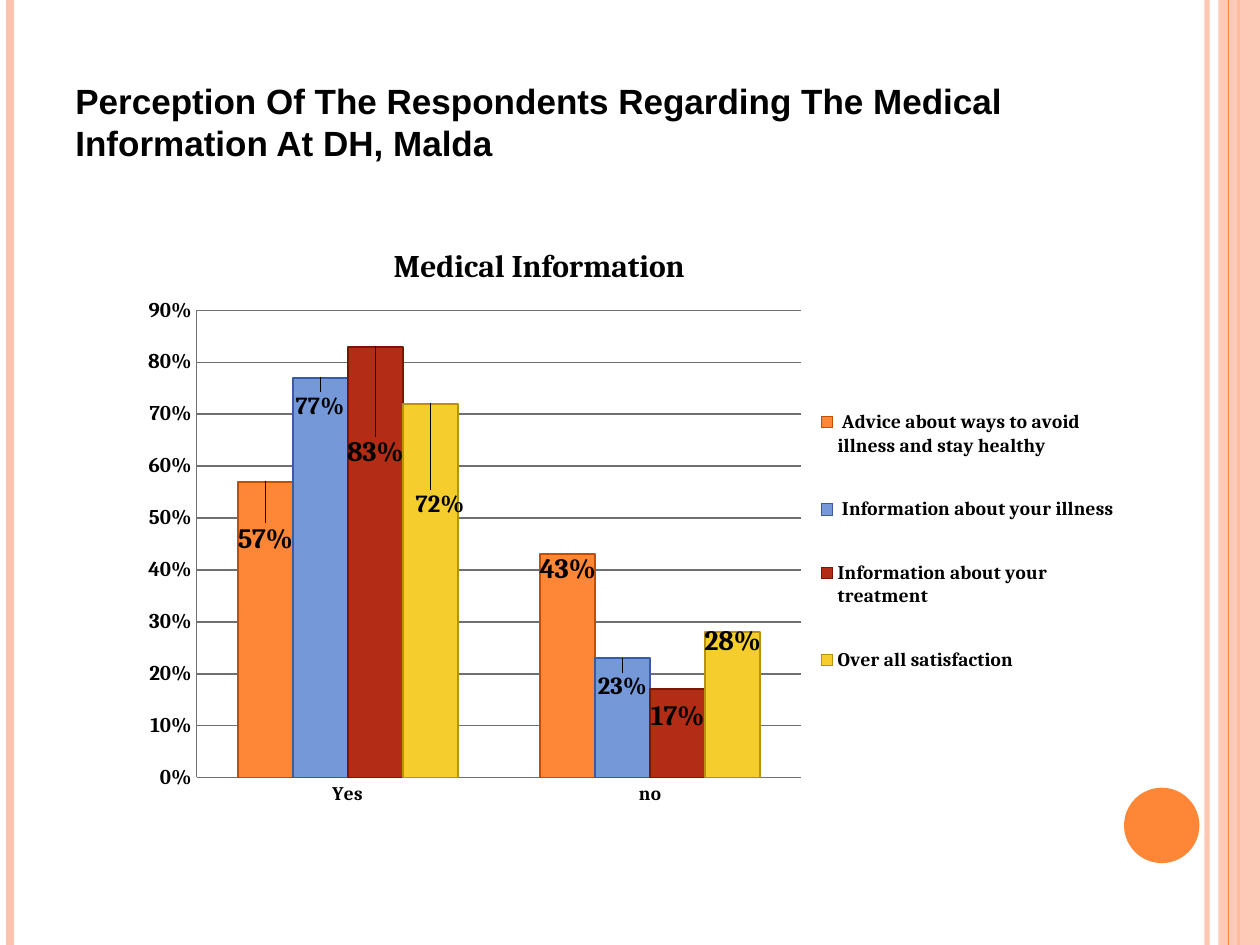
"""Build a slide with a clustered column chart on perceived medical information."""
from dataclasses import dataclass

from pptx import Presentation
from pptx.chart.data import CategoryChartData
from pptx.dml.color import RGBColor
from pptx.enum.chart import XL_CHART_TYPE, XL_LABEL_POSITION, XL_LEGEND_POSITION, XL_TICK_MARK
from pptx.enum.shapes import MSO_CONNECTOR, MSO_SHAPE
from pptx.oxml import parse_xml
from pptx.oxml.ns import nsdecls
from pptx.util import Cm, Pt

COLUMNS = XL_CHART_TYPE.COLUMN_CLUSTERED
OUTSIDE = XL_LABEL_POSITION.OUTSIDE_END
RIGHT = XL_LEGEND_POSITION.RIGHT
NO_TICK = XL_TICK_MARK.NONE
STRAIGHT = MSO_CONNECTOR.STRAIGHT
RECTANGLE = MSO_SHAPE.RECTANGLE
OVAL = MSO_SHAPE.OVAL

WIDTH, HEIGHT = 25.4, 19.05
PINK, ORANGE, BLACK, GREY = "FEC3AE", "FE8637", "000000", "707070"


@dataclass(frozen=True)
class Stripe:
    x: float
    color: str
    weight: float
    opacity: int = 100


@dataclass(frozen=True)
class Block:
    preset: MSO_SHAPE
    box: tuple[float, float, float, float]
    color: str
    opacity: int = 100


@dataclass(frozen=True)
class Answer:
    name: str
    shares: tuple[float, float]
    color: str
    outline: str
    label_sizes: tuple[int, int]
    label_shifts: tuple[tuple[float, float], tuple[float, float]]


DECORATION = (
    Stripe(24.33, PINK, 3, 93),
    Stripe(0.2, PINK, 4.5),
    Stripe(24.97, ORANGE, 1.5),
    Block(RECTANGLE, (24.56, 0, 0.84, HEIGHT), PINK, 87),
    Stripe(24.77, ORANGE, 0.75),
    Block(OVAL, (22.66, 15.88, 1.52, 1.52), ORANGE),
)
CATEGORIES = ("Yes", "no")
ANSWERS = (
    Answer(" Advice about ways to avoid illness and stay healthy", (0.57, 0.43),
           ORANGE, "C24F00", (16, 16), ((0, 0.13), (0, 0.06))),
    Answer(" Information about your illness", (0.77, 0.23),
           "7598D9", "3A5BA0", (14, 14), ((0, 0.08), (0, 0.08))),
    Answer("Information about your treatment", (0.83, 0.17),
           "B32C16", "7D1404", (16, 16), ((0, 0.21), (0, 0.08))),
    Answer("Over all satisfaction", (0.72, 0.28),
           "F5CD2D", "B8920A", (14, 16), ((0.01, 0.2), (0, 0.05))),
)


def rgb(value: str) -> RGBColor:
    return RGBColor.from_string(value)


def apply(target, formats: dict) -> None:
    for attribute, value in formats.items():
        setattr(target, attribute, value)


def style_font(font, size: float, name: str = "Cambria") -> None:
    apply(font, {"size": Pt(size), "bold": True, "name": name})
    font.color.rgb = rgb(BLACK)


def style_line(line, color: str, weight: float) -> None:
    line.color.rgb = rgb(color)
    line.width = Pt(weight)


def set_opacity(shape, percent: int) -> None:
    if percent < 100:
        color = shape._element.spPr.xpath(".//a:srgbClr")[0]
        color.append(parse_xml(f'<a:alpha {nsdecls("a")} val="{percent * 1000}"/>'))


def draw_stripe(slide, stripe: Stripe) -> None:
    x = Cm(stripe.x)
    line = slide.shapes.add_connector(STRAIGHT, x, 0, x, Cm(HEIGHT))
    style_line(line.line, stripe.color, stripe.weight)
    set_opacity(line, stripe.opacity)
    line._element.spPr.append(parse_xml(f'<a:effectLst {nsdecls("a")}/>'))


def draw_block(slide, block: Block) -> None:
    shape = slide.shapes.add_shape(block.preset, *map(Cm, block.box))
    shape.shadow.inherit = False
    shape.fill.solid()
    shape.fill.fore_color.rgb = rgb(block.color)
    shape.line.fill.background()
    set_opacity(shape, block.opacity)


def layout_xml(target: str = "", **fractions: float):
    parts = [f'<c:layoutTarget val="{target}"/>'] if target else []
    if "w" in fractions:
        parts += ['<c:xMode val="edge"/>', '<c:yMode val="edge"/>']
    parts += [f'<c:{key} val="{value}"/>' for key, value in fractions.items()]
    return parse_xml(f'<c:layout {nsdecls("c")}><c:manualLayout>{"".join(parts)}'
                     '</c:manualLayout></c:layout>')


def place(element, after: str, layout) -> None:
    for old in element.xpath("./c:layout"):
        element.remove(old)
    anchors = element.xpath(f"./c:{after}")
    if anchors:
        anchors[0].addnext(layout)
    else:
        element.insert(0, layout)


def style_series(series, answer: Answer) -> None:
    series.format.fill.solid()
    series.format.fill.fore_color.rgb = rgb(answer.color)
    style_line(series.format.line, answer.outline, 1)
    labels = series.data_labels
    apply(labels, {"show_value": True, "number_format": "0%",
                   "number_format_is_linked": False, "position": OUTSIDE})
    style_font(labels.font, answer.label_sizes[0])
    for index, size in enumerate(answer.label_sizes):
        label = series.points[index].data_label
        style_font(label.font, size)
        label.position = OUTSIDE
    for element, (x, y) in zip(series._element.xpath(".//c:dLbl"), answer.label_shifts):
        place(element, "idx", layout_xml(x=x, y=y))


def style_axes(chart) -> None:
    for axis, size in ((chart.category_axis, 11), (chart.value_axis, 12)):
        apply(axis, {"major_tick_mark": NO_TICK, "minor_tick_mark": NO_TICK})
        style_font(axis.tick_labels.font, size)
        style_line(axis.format.line, GREY, 0.75)
    shares = chart.value_axis
    apply(shares, {"minimum_scale": 0, "maximum_scale": 0.9, "major_unit": 0.1,
                   "has_major_gridlines": True})
    apply(shares.tick_labels, {"number_format": "0%", "number_format_is_linked": False})
    style_line(shares.major_gridlines.format.line, GREY, 1)


def draw_chart(slide) -> None:
    data = CategoryChartData(number_format="0%")
    data.categories = CATEGORIES
    for answer in ANSWERS:
        data.add_series(answer.name, answer.shares)
    box = map(Cm, (2.54, 4.45, 20.32, 12.07))
    chart = slide.shapes.add_chart(COLUMNS, *box, data).chart
    style_font(chart.font, 10)
    apply(chart, {"has_title": True, "has_legend": True})
    heading = chart.chart_title.text_frame
    heading.text = "Medical Information"
    style_font(heading.paragraphs[0].runs[0].font, 18)
    apply(chart.legend, {"position": RIGHT, "include_in_layout": False})
    style_font(chart.legend.font, 11)
    style_axes(chart)
    columns = chart.plots[0]
    apply(columns, {"gap_width": 150, "overlap": 0, "vary_by_categories": False})
    for series, answer in zip(columns.series, ANSWERS):
        style_series(series, answer)
    root = chart._chartSpace
    place(root.xpath("./c:chart/c:title")[0], "tx", layout_xml(x=0.26, y=0.03, w=0.3, h=0.1))
    place(root.xpath(".//c:plotArea")[0], "none", layout_xml("inner", x=0.07, y=0.15, w=0.6, h=0.78))
    place(root.xpath(".//c:legend")[0], "legendPos", layout_xml(x=0.68, y=0.25, w=0.31, h=0.57))


def draw_title(slide) -> None:
    frame = slide.shapes.add_textbox(*map(Cm, (1.27, 1.47, 21.8, 1.96))).text_frame
    frame.word_wrap = True
    run = frame.paragraphs[0].add_run()
    run.text = "Perception Of The Respondents Regarding The Medical Information At DH, Malda"
    style_font(run.font, 20, "Arial")


def main() -> None:
    deck = Presentation()
    apply(deck, {"slide_width": Cm(WIDTH), "slide_height": Cm(HEIGHT)})
    slide = deck.slides.add_slide(deck.slide_layouts[6])
    for part in DECORATION:
        draw = draw_stripe if isinstance(part, Stripe) else draw_block
        draw(slide, part)
    draw_chart(slide)
    draw_title(slide)
    deck.save("out.pptx")


if __name__ == "__main__":
    main()
